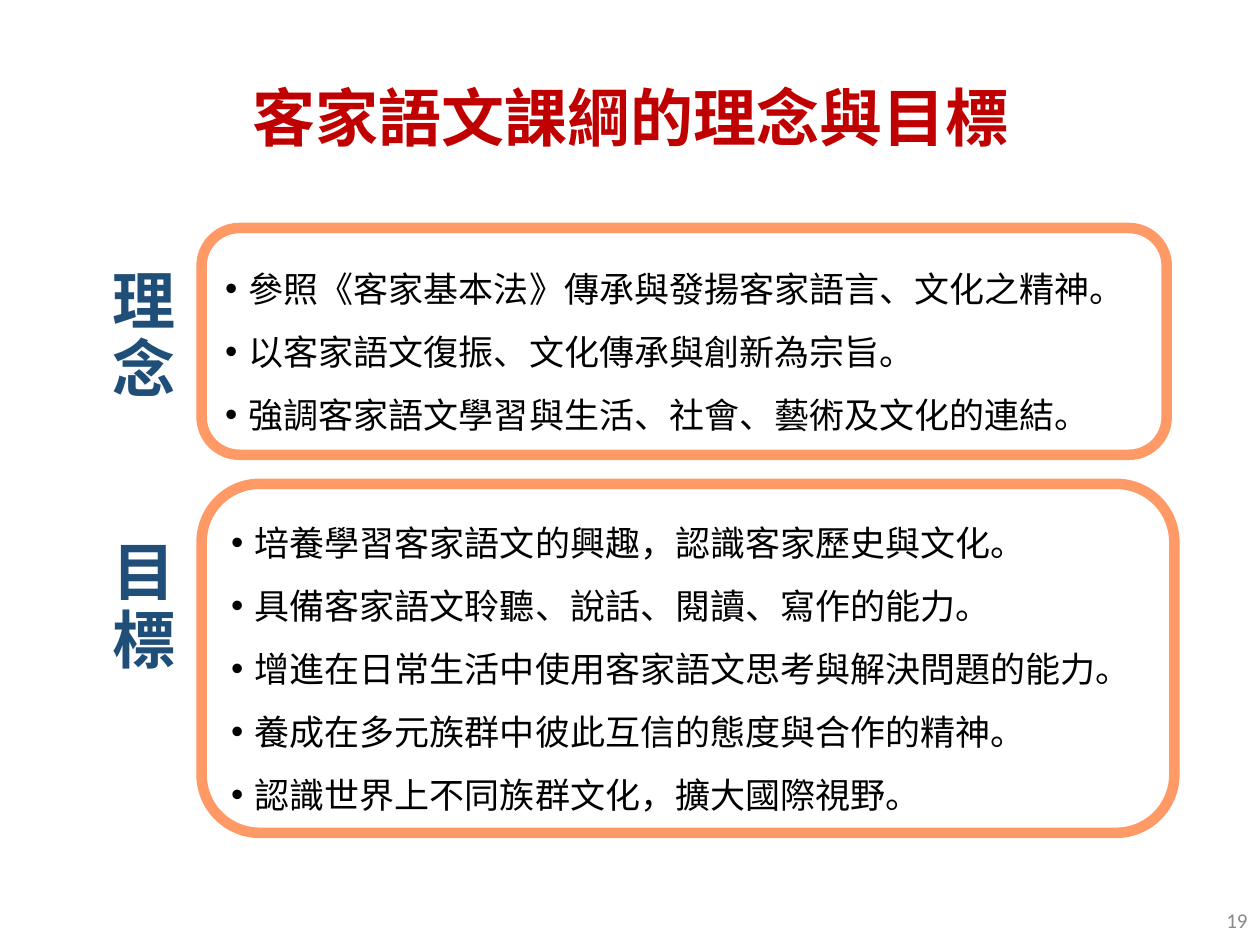
from dataclasses import dataclass

from lxml.etree import SubElement
from pptx import Presentation
from pptx.dml.color import RGBColor
from pptx.enum.shapes import MSO_SHAPE
from pptx.enum.text import MSO_ANCHOR, PP_ALIGN
from pptx.oxml.ns import qn
from pptx.util import Pt

COLOURS = {
    "paper": "FFFFFF",
    "border": "FF9966",
    "body": "000000",
    "title": "C00000",
    "label": "1F4E79",
    "number": "898989",
}
CJK = "Noto Sans CJK SC"
LATIN = "Calibri"
LABEL_LEFT = 49.68
PANEL_LEFT = 115.2
SPACE_BEFORE = 6
INDENT = 13.5


@dataclass
class Style:
    size: float
    font: str
    colour: str
    bold: bool = False


@dataclass
class Caption:
    text: str
    area: tuple[float, float, float, float]
    style: Style
    align: PP_ALIGN
    insets: tuple[float, float] = (7.2, 3.6)
    spacing: float = 1.0


@dataclass
class Panel:
    top: float
    width: float
    height: float
    items: list[str]


BODY = Style(20, CJK, "body")
TITLE = Style(36, CJK, "title", True)
LABEL = Style(36, CJK, "label", True)
NUMBER = Style(12, LATIN, "number")

PANELS = [
    Panel(276.48, 555.84, 199.44, [
        "培養學習客家語文的興趣，認識客家歷史與文化。",
        "具備客家語文聆聽、說話、閱讀、寫作的能力。",
        "增進在日常生活中使用客家語文思考與解決問題的能力。",
        "養成在多元族群中彼此互信的態度與合作的精神。",
        "認識世界上不同族群文化，擴大國際視野。",
    ]),
    Panel(130.32, 551.52, 129.6, [
        "參照《客家基本法》傳承與發揚客家語言、文化之精神。",
        "以客家語文復振、文化傳承與創新為宗旨。",
        "強調客家語文學習與生活、社會、藝術及文化的連結。",
    ]),
]


def label(text: str, top: float) -> Caption:
    return Caption(text, (LABEL_LEFT, top, 65.52, 102.96), LABEL,
                   PP_ALIGN.CENTER, (10.8, 5.04), 0.9)


CAPTIONS = [
    Caption("客家語文課綱的理念與目標", (LABEL_LEFT, 14.4, 620.64, 104.4),
            TITLE, PP_ALIGN.CENTER),
    Caption("19", (558, 511.2, 162, 28.8), NUMBER, PP_ALIGN.RIGHT),
    label("理念", 141.84),
    label("目標", 296.64),
]


def colour(name: str) -> RGBColor:
    return RGBColor.from_string(COLOURS[name])


def add_span(para, text: str, style: Style) -> None:
    span = para.add_run()
    span.text = text
    span.font.size = Pt(style.size)
    span.font.bold = style.bold
    span.font.name = style.font
    span.font.color.rgb = colour(style.colour)
    SubElement(span.font._element, qn("a:ea"), typeface=style.font)


def add_bullet(para) -> None:
    properties = para._p.get_or_add_pPr()
    properties.set("marL", str(Pt(INDENT)))
    properties.set("indent", str(-Pt(INDENT)))
    SubElement(properties, qn("a:buFont"), typeface="Arial")
    SubElement(properties, qn("a:buChar"), char="•")


def draw_panel(page, panel: Panel) -> None:
    box = page.shapes.add_shape(
        MSO_SHAPE.FLOWCHART_ALTERNATE_PROCESS,
        Pt(PANEL_LEFT), Pt(panel.top), Pt(panel.width), Pt(panel.height))
    box.shadow.inherit = False
    box.fill.solid()
    box.fill.fore_color.rgb = colour("paper")
    box.line.color.rgb = colour("border")
    box.line.width = Pt(6)
    frame = box.text_frame
    frame.word_wrap = True
    frame.vertical_anchor = MSO_ANCHOR.MIDDLE
    frame.margin_top = Pt(3.6 + SPACE_BEFORE)
    for index, item in enumerate(panel.items):
        para = frame.add_paragraph() if index else frame.paragraphs[0]
        para.alignment = PP_ALIGN.LEFT
        para.line_spacing = Pt(30)
        para.space_before = Pt(SPACE_BEFORE if index else 0)
        add_bullet(para)
        add_span(para, item, BODY)


def draw_caption(page, caption: Caption) -> None:
    box = page.shapes.add_textbox(*map(Pt, caption.area))
    frame = box.text_frame
    frame.word_wrap = True
    frame.vertical_anchor = MSO_ANCHOR.MIDDLE
    side, end = map(Pt, caption.insets)
    frame.margin_left = frame.margin_right = side
    frame.margin_top = frame.margin_bottom = end
    para = frame.paragraphs[0]
    para.alignment = caption.align
    para.line_spacing = caption.spacing
    add_span(para, caption.text, caption.style)


def main() -> None:
    deck = Presentation()
    deck.slide_width, deck.slide_height = Pt(720), Pt(540)
    page = deck.slides.add_slide(deck.slide_layouts[6])
    for panel in PANELS:
        draw_panel(page, panel)
    for caption in CAPTIONS:
        draw_caption(page, caption)
    deck.save("out.pptx")


if __name__ == "__main__":
    main()
